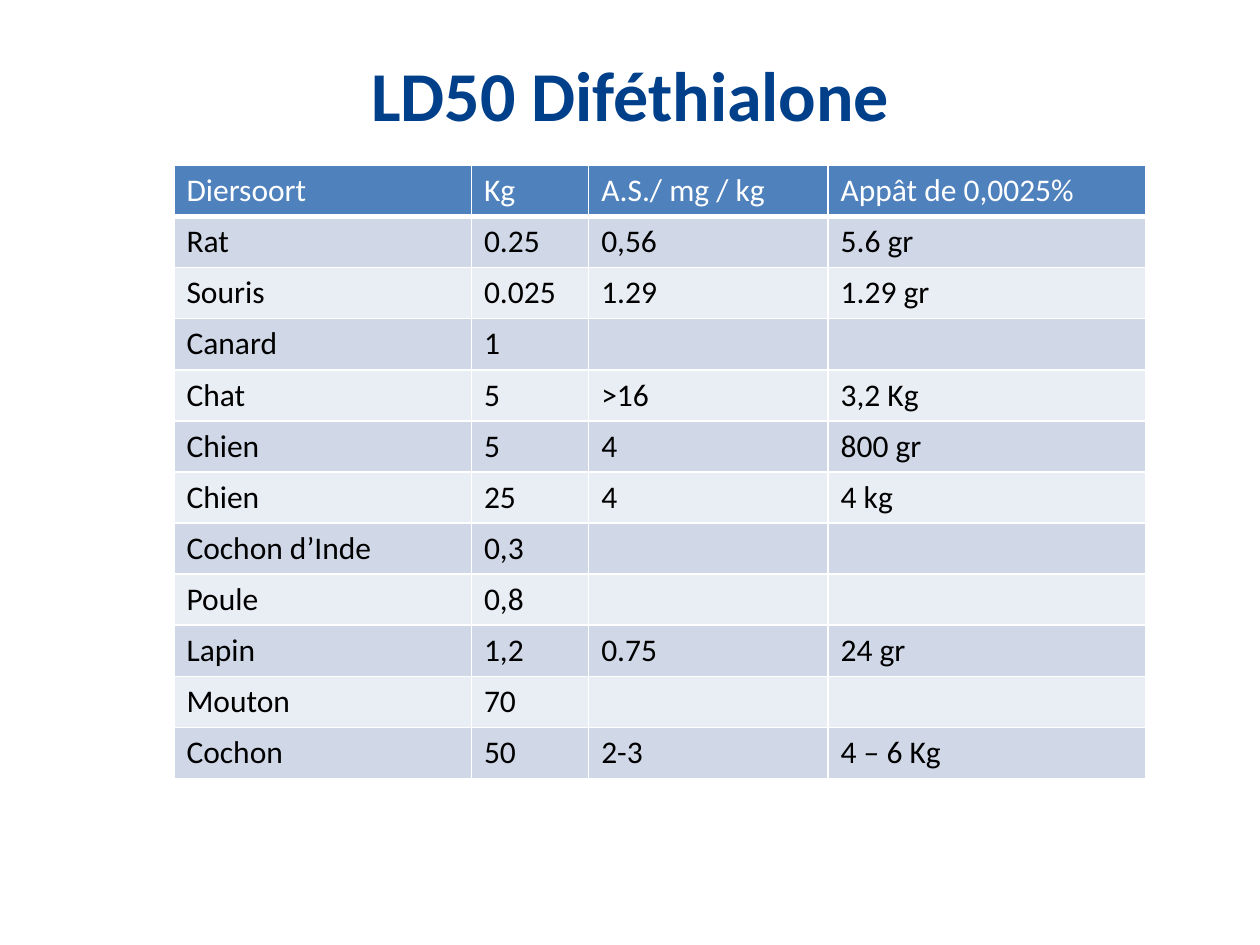
from typing import NamedTuple

from lxml.etree import SubElement
from pptx import Presentation
from pptx.dml.color import RGBColor
from pptx.enum.text import PP_ALIGN
from pptx.oxml.ns import qn
from pptx.util import Pt

TITLE_BLUE = RGBColor(0x00, 0x3F, 0x8A)
HEADER_BLUE = RGBColor(0x4F, 0x81, 0xBD)
BAND_DARK = RGBColor(0xD0, 0xD8, 0xE8)
BAND_LIGHT = RGBColor(0xE9, 0xED, 0xF4)
WHITE = RGBColor(0xFF, 0xFF, 0xFF)
BLACK = RGBColor(0x00, 0x00, 0x00)
FONT = "Calibri"

COLUMN_WIDTHS = (170, 67, 136.8, 181.4)
ROW_HEIGHT = 29.2


class Dose(NamedTuple):
    animal: str
    weight: str
    active_substance: str = ""
    bait: str = ""


DOSES = (
    Dose("Diersoort", "Kg", "A.S./ mg / kg", "Appât de 0,0025%"),
    Dose("Rat", "0.25", "0,56", "5.6 gr"),
    Dose("Souris", "0.025", "1.29", "1.29 gr"),
    Dose("Canard", "1"),
    Dose("Chat", "5", ">16", "3,2 Kg"),
    Dose("Chien", "5", "4", "800 gr"),
    Dose("Chien", "25", "4", "4 kg"),
    Dose("Cochon d’Inde", "0,3"),
    Dose("Poule", "0,8"),
    Dose("Lapin", "1,2", "0.75", "24 gr"),
    Dose("Mouton", "70"),
    Dose("Cochon", "50", "2-3", "4 – 6 Kg"),
)


def add_run(paragraph, text: str, size: float, color: RGBColor, bold: bool = False) -> None:
    run = paragraph.add_run()
    run.text = text
    run.font.name = FONT
    run.font.size = Pt(size)
    run.font.bold = bold
    run.font.color.rgb = color


def add_borders(cell, bottom_width: float) -> None:
    properties = cell._tc.get_or_add_tcPr()
    for side, width in (("L", 1), ("R", 1), ("T", 1), ("B", bottom_width)):
        line = SubElement(properties, qn(f"a:ln{side}"), w=str(Pt(width)))
        fill = SubElement(line, qn("a:solidFill"))
        SubElement(fill, qn("a:srgbClr"), val=str(WHITE))


def fill_cell(cell, text: str, row: int) -> None:
    is_header = row == 0
    add_borders(cell, 3 if is_header else 1)
    cell.fill.solid()
    band = BAND_DARK if row % 2 else BAND_LIGHT
    cell.fill.fore_color.rgb = HEADER_BLUE if is_header else band
    if text:
        add_run(cell.text_frame.paragraphs[0], text, 18, WHITE if is_header else BLACK)


def add_title(slide, text: str) -> None:
    title = slide.shapes.add_textbox(Pt(16.5), Pt(26), Pt(687.5), Pt(55.5))
    title.text_frame.word_wrap = True
    paragraph = title.text_frame.paragraphs[0]
    paragraph.alignment = PP_ALIGN.CENTER
    add_run(paragraph, text, 40, TITLE_BLUE, bold=True)


def add_dose_table(slide, doses: tuple[Dose, ...]) -> None:
    table = slide.shapes.add_table(
        len(doses), len(COLUMN_WIDTHS), Pt(99.4), Pt(94.5),
        Pt(sum(COLUMN_WIDTHS)), Pt(ROW_HEIGHT * len(doses)),
    ).table
    for column, width in zip(table.columns, COLUMN_WIDTHS):
        column.width = Pt(width)
    for row, dose in enumerate(doses):
        table.rows[row].height = Pt(ROW_HEIGHT)
        for column, text in enumerate(dose):
            fill_cell(table.cell(row, column), text, row)


def main() -> None:
    presentation = Presentation()
    presentation.slide_width, presentation.slide_height = Pt(720), Pt(540)
    slide = presentation.slides.add_slide(presentation.slide_layouts[6])

    # Title
    add_title(slide, "LD50 Diféthialone")

    # Lethal dose per animal
    add_dose_table(slide, DOSES)

    presentation.save("out.pptx")


if __name__ == "__main__":
    main()
